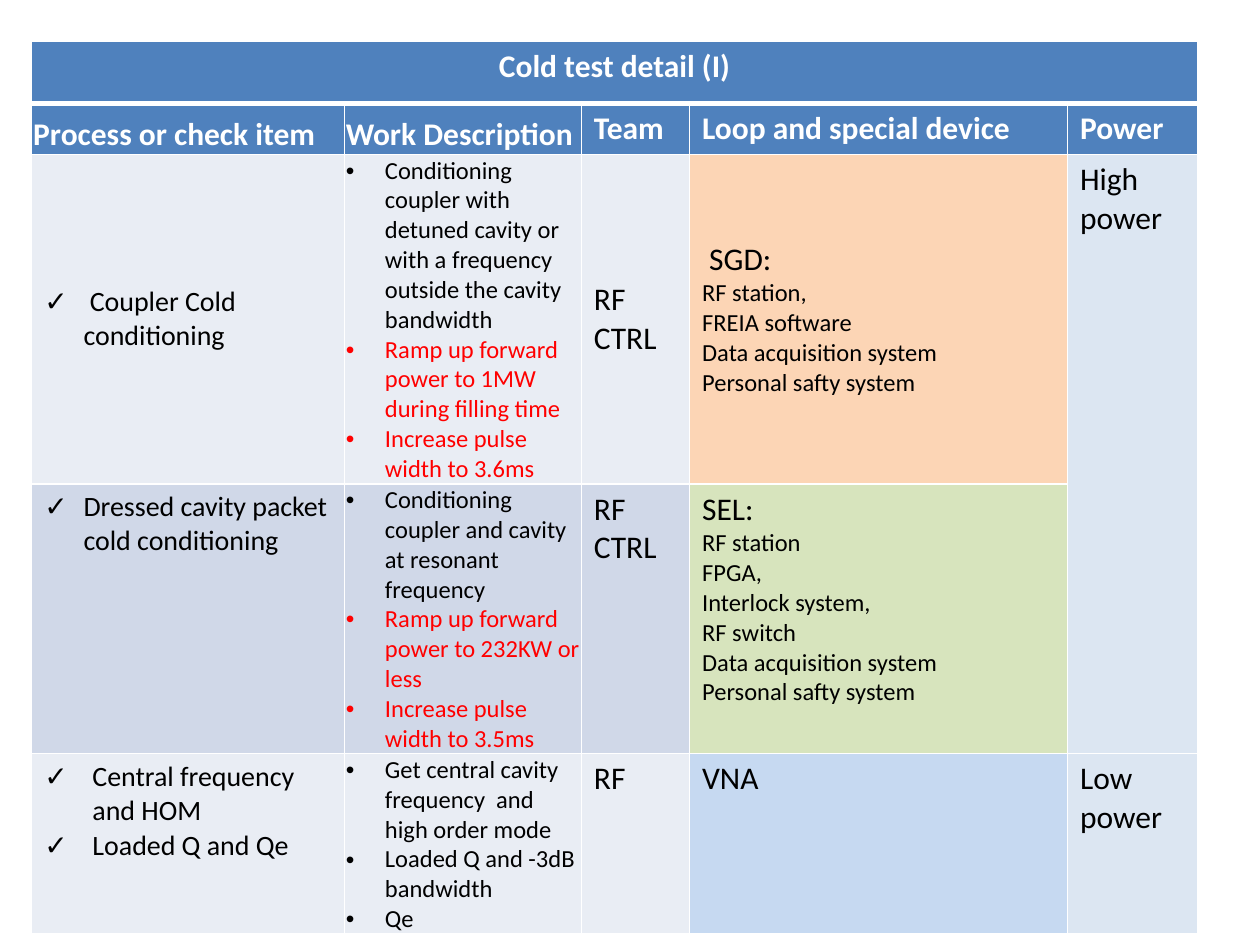
from lxml import etree
from pptx import Presentation
from pptx import util as u
from pptx.dml.color import RGBColor
from pptx.enum import text
from pptx.oxml import ns

WHITE = RGBColor(255, 255, 255)
BLACK = RGBColor(0, 0, 0)
RED = RGBColor(255, 0, 0)
BLUE = RGBColor(0x4F, 0x81, 0xBD)
PALE = RGBColor(0xE9, 0xED, 0xF4)
GREY = RGBColor(0xD0, 0xD8, 0xE8)
PEACH = RGBColor(0xFC, 0xD5, 0xB5)
GREEN = RGBColor(0xD7, 0xE4, 0xBD)
SKY = RGBColor(0xC6, 0xD9, 0xF1)
ICE = RGBColor(0xDC, 0xE6, 0xF2)

TOP = text.MSO_ANCHOR.TOP
MID = text.MSO_ANCHOR.MIDDLE
LOW = text.MSO_ANCHOR.BOTTOM
TIGHT = {"margin_left": u.Cm(0.03), "margin_right": u.Cm(0.03),
         "margin_top": u.Cm(0.03), "margin_bottom": 0}
COLS = (6.3, 4.78, 2.18, 7.62, 2.62)
ROWS = (1.24, 1.02, 6.63, 5.44, 3.6)
HEADS = ("Process or check item", "Work Description", "Team",
         "Loop and special device", "Power")
STEPS = (
    {"fill": PALE, "anchors": (MID, MID, MID, MID), "indent": 0.79,
     "checks": [" Coupler Cold conditioning"],
     "work": [("Conditioning coupler with detuned cavity or with a frequency "
               "outside the cavity bandwidth", BLACK),
              ("Ramp up forward power to 1MW during filling time", RED),
              ("Increase pulse width to 3.6ms", RED)],
     "team": ["RF", "CTRL"], "loop": " SGD:", "tint": PEACH,
     "parts": ["RF station,", "FREIA software", "Data acquisition system",
               "Personal safty system"]},
    {"fill": GREY, "anchors": (TOP, LOW, TOP, TOP), "indent": 0.79,
     "checks": ["Dressed cavity packet cold conditioning"],
     "work": [("Conditioning coupler and cavity at resonant frequency", BLACK),
              ("Ramp up forward power to 232KW or less", RED),
              ("Increase pulse width to 3.5ms", RED)],
     "team": ["RF", "CTRL"], "loop": "SEL:", "tint": GREEN,
     "parts": ["RF station", "FPGA,", "Interlock system,", "RF switch",
               "Data acquisition system", "Personal safty system"]},
    {"fill": PALE, "anchors": (TOP, LOW, TOP, TOP), "indent": 0.97,
     "checks": ["Central frequency and HOM", "Loaded Q and Qe"],
     "work": [("Get central cavity frequency  and high order mode", BLACK),
              ("Loaded Q and -3dB bandwidth", BLACK), ("Qe", BLACK)],
     "team": ["RF"], "loop": "VNA", "tint": SKY, "parts": []},
)


def edge(cell, wide):
    props = cell._tc.get_or_add_tcPr()
    for side in "LRTB":
        size = u.Pt(3 if side == wide else 1)
        line = etree.SubElement(props, ns.qn("a:ln" + side), w=str(size))
        paint = etree.SubElement(line, ns.qn("a:solidFill"))
        etree.SubElement(paint, ns.qn("a:srgbClr"), val=str(WHITE))


def mark(para, sign, indent):
    props = para._p.get_or_add_pPr()
    props.set("marL", str(u.Cm(indent)))
    props.set("indent", str(-u.Cm(indent)))
    etree.SubElement(props, ns.qn("a:buFont"), typeface="Arial")
    etree.SubElement(props, ns.qn("a:buChar"), char=sign)


def write(cell, lines, fill, anchor=TOP, bold=False, sign=None, indent=0.79,
          tight=False):
    cell.fill.solid()
    cell.fill.fore_color.rgb = fill
    cell.vertical_anchor = anchor
    for name, value in (TIGHT if tight else {}).items():
        setattr(cell, name, value)
    frame = cell.text_frame
    for spot, (words, size, color) in enumerate(lines):
        para = frame.add_paragraph() if spot else frame.paragraphs[0]
        if sign:
            mark(para, sign, indent)
        run = para.add_run()
        run.text = words
        look = {"name": "Calibri", "size": u.Pt(size), "bold": bold}
        for name, value in look.items():
            setattr(run.font, name, value)
        run.font.color.rgb = color


def plain(words, size=18):
    return [(word, size, BLACK) for word in words]


def head(grid):
    title = grid.cell(0, 0)
    title.merge(grid.cell(0, len(COLS) - 1))
    write(title, [("Cold test detail (I)", 18, WHITE)], BLUE, bold=True)
    title.text_frame.paragraphs[0].alignment = text.PP_ALIGN.CENTER
    for col, name in enumerate(HEADS):
        snug = col < 2
        write(grid.cell(1, col), [(name, 18, WHITE)], BLUE,
              LOW if snug else TOP, bold=True, tight=snug)


def body(grid):
    for row, step in enumerate(STEPS, 2):
        cells = [grid.cell(row, col) for col in range(4)]
        fill, spots = step["fill"], step["anchors"]
        work = [(words, 14, color) for words, color in step["work"]]
        loop = plain([step["loop"]]) + plain(step["parts"], 14)
        write(cells[0], plain(step["checks"], 16), fill, spots[0],
              sign="✓", indent=step["indent"])
        write(cells[1], work, fill, spots[1], sign="•", tight=True)
        write(cells[2], plain(step["team"]), fill, spots[2])
        write(cells[3], loop, step["tint"], spots[3])
    grid.cell(2, 4).merge(grid.cell(3, 4))
    write(grid.cell(2, 4), plain(["High", "power"]), ICE)
    write(grid.cell(4, 4), plain(["Low power"]), ICE)


def chart(slide, left, top):
    grid = slide.shapes.add_table(
        len(ROWS), len(COLS), u.Cm(left), u.Cm(top),
        u.Cm(sum(COLS)), u.Cm(sum(ROWS))).table
    for col, width in zip(grid.columns, COLS):
        col.width = u.Cm(width)
    for spot, (row, height) in enumerate(zip(grid.rows, ROWS)):
        row.height = u.Cm(height)
        for cell in row.cells:
            edge(cell, {0: "B", 1: "T"}.get(spot))
    head(grid)
    body(grid)


def main():
    deck = Presentation()
    deck.slide_width, deck.slide_height = u.Cm(25.4), u.Cm(19.05)
    slide = deck.slides.add_slide(deck.slide_layouts[6])
    chart(slide, 0.64, 0.84)
    deck.save("out.pptx")


if __name__ == "__main__":
    main()
